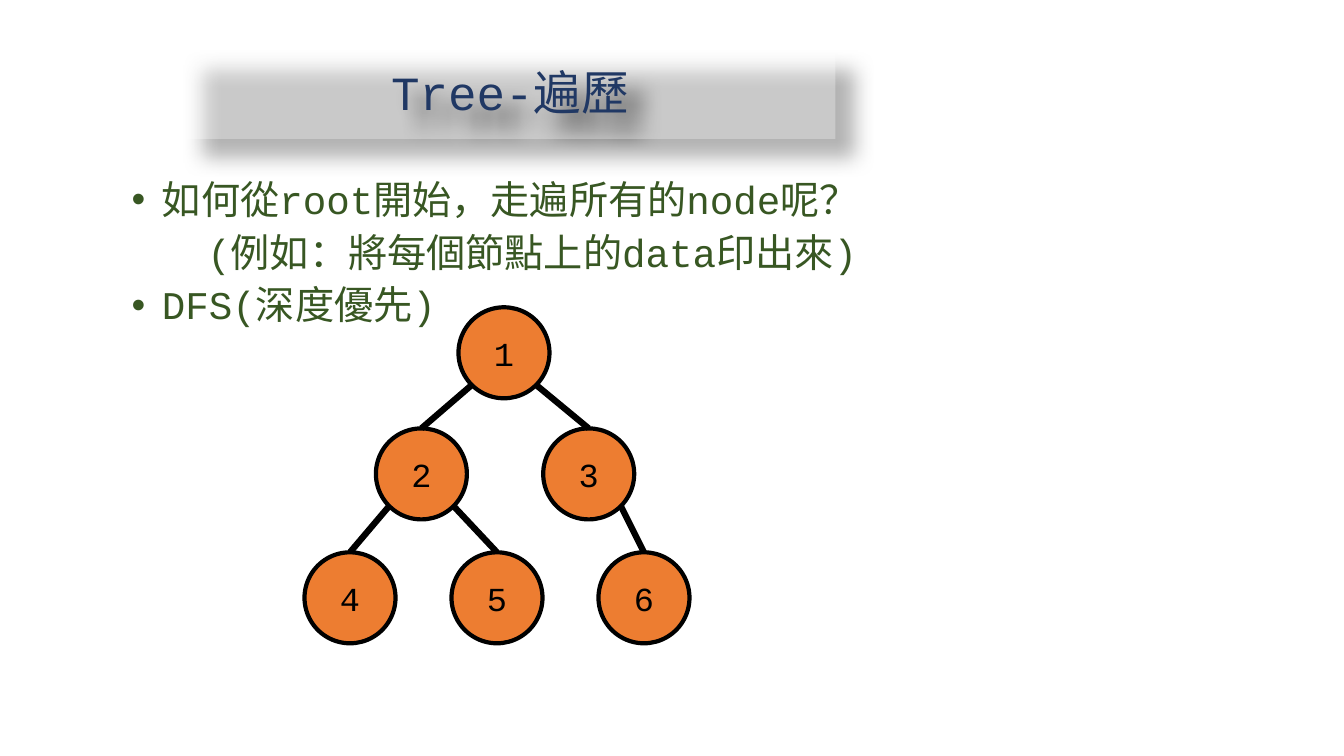
from math import cos, pi

from lxml.etree import SubElement
from pptx import Presentation
from pptx.dml.color import RGBColor
from pptx.enum.shapes import MSO_CONNECTOR as Connector, MSO_SHAPE as Shape
from pptx.enum.text import MSO_ANCHOR as Anchor, PP_ALIGN as Align
from pptx.oxml.ns import qn
from pptx.util import Pt

NAVY, GREEN, ORANGE = "203864", "385723", "ED7D31"
BLACK, WHITE = "000000", "FFFFFF"


def color(hex_string):
    return RGBColor.from_string(hex_string)


def add_xml(parent, tag, **attributes):
    element = SubElement(parent, qn(tag))
    for name, value in attributes.items():
        element.set(name, str(value))
    return element


class TreeSlide:
    font = "Courier New"
    diameter = 65

    def __init__(self, slide):
        self.shapes = slide.shapes

    def add_text(self, paragraph, text, size, hex_string):
        run = paragraph.add_run()
        run.text = text
        run.font.name = self.font
        run.font.size = Pt(size)
        run.font.color.rgb = color(hex_string)

    def shape(self, preset, left, top, width, height, fill):
        shape = self.shapes.add_shape(preset, Pt(left), Pt(top), Pt(width), Pt(height))
        shape.shadow.inherit = False
        shape.fill.solid()
        shape.fill.fore_color.rgb = color(fill)
        shape.text_frame.vertical_anchor = Anchor.MIDDLE
        shape.text_frame.paragraphs[0].alignment = Align.CENTER
        return shape

    def title(self, text, left, top, width, height):
        """Add a translucent title panel with a soft shadow."""
        panel = self.shape(Shape.RECTANGLE, left, top, width, height, WHITE)
        panel.line.fill.background()
        properties = panel._element.spPr
        add_xml(properties.find(qn("a:solidFill"))[0], "a:alpha", val=30000)
        shadow = add_xml(properties.find(qn("a:effectLst")), "a:outerShdw",
                         blurRad=Pt(15), dist=Pt(18), dir=45 * 60000,
                         algn="tl", rotWithShape=0)
        add_xml(add_xml(shadow, "a:srgbClr", val=BLACK), "a:alpha", val=30000)
        heading = panel.text_frame.paragraphs[0]
        heading.line_spacing = 0.9
        self.add_text(heading, text, 34, NAVY)

    def body(self, lines, left, top, width, height):
        """Add bulleted lines; a line that starts with a tab has no bullet."""
        frame = self.shapes.add_textbox(Pt(left), Pt(top), Pt(width), Pt(height)).text_frame
        frame.word_wrap = True
        for index, line in enumerate(lines):
            paragraph = frame.add_paragraph() if index else frame.paragraphs[0]
            paragraph.line_spacing = 0.9
            if index:
                paragraph.space_before = Pt(7.5)
            properties = paragraph._p.get_or_add_pPr()
            if line.startswith("\t"):
                add_xml(add_xml(properties, "a:tabLst"), "a:tab", pos=Pt(54), algn="l")
            else:
                properties.set("marL", str(Pt(21.6)))
                properties.set("indent", str(-Pt(21.6)))
                add_xml(properties, "a:buFont", typeface="Arial")
                add_xml(properties, "a:buChar", char="•")
            self.add_text(paragraph, line, 28, GREEN)

    def node(self, label, x, y):
        radius = self.diameter / 2
        circle = self.shape(Shape.OVAL, x - radius, y - radius,
                            self.diameter, self.diameter, ORANGE)
        circle.line.color.rgb = color(BLACK)
        circle.line.width = Pt(3)
        self.add_text(circle.text_frame.paragraphs[0], label, 24, BLACK)
        return circle

    def edge(self, parent, child, child_circle):
        """Join the parent's lower diagonal point to the top of the child."""
        (x, y), (child_x, child_y) = parent, child
        reach = self.diameter / 2 * cos(pi / 4)
        side = 1 if child_x > x else -1
        edge = self.shapes.add_connector(
            Connector.STRAIGHT, Pt(x + side * reach), Pt(y + reach),
            Pt(child_x), Pt(child_y - self.diameter / 2))
        edge.end_connect(child_circle, 0)
        edge.line.color.rgb = color(BLACK)
        edge.line.width = Pt(4.5)
        add_xml(edge._element.spPr, "a:effectLst")


def main():
    presentation = Presentation()
    presentation.slide_width, presentation.slide_height = Pt(960), Pt(540)
    tree = TreeSlide(presentation.slides.add_slide(presentation.slide_layouts[6]))

    tree.title("Tree-遍歷", 131.8, 36.7, 465, 62.6)
    tree.body(["如何從root開始，走遍所有的node呢？",
               "\t(例如：將每個節點上的data印出來)",
               "DFS(深度優先)"], 87, 125.3, 828, 364.3)

    centers = {1: (360, 252), 2: (301, 338.5), 3: (420.5, 338.5),
               4: (250, 427), 5: (355, 427), 6: (460, 427)}
    circles = {number: tree.node(str(number), x, y)
               for number, (x, y) in centers.items()}
    for parent, child in [(1, 2), (1, 3), (2, 4), (2, 5), (3, 6)]:
        tree.edge(centers[parent], centers[child], circles[child])

    presentation.save("out.pptx")


if __name__ == "__main__":
    main()
